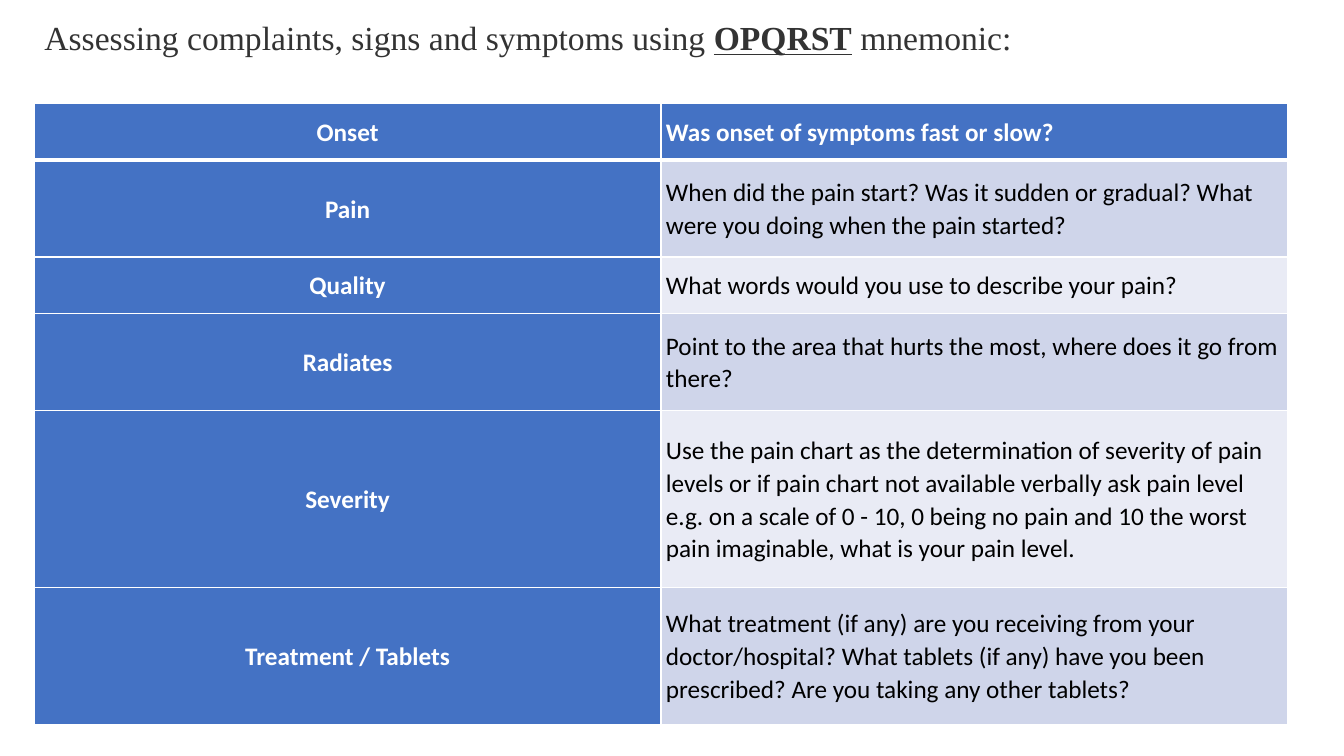
from dataclasses import dataclass
from lxml import etree
from pptx import Presentation, util as u
from pptx.dml.color import RGBColor
from pptx.enum import text
from pptx.oxml import ns

TITLE = [
    ("Assessing complaints, signs and symptoms using ", False),
    ("OPQRST", True),
    (" mnemonic:", False),
]
ROWS = [
    ("Onset", "Was onset of symptoms fast or slow?", 0.56),
    ("Pain", "When did the pain start? Was it sudden or gradual? What were you "
     "doing when the pain started?", 0.96),
    ("Quality", "What words would you use to describe your pain?", 0.56),
    ("Radiates", "Point to the area that hurts the most, where does it go from "
     "there?", 0.96),
    ("Severity", "Use the pain chart as the determination of severity of pain levels "
     "or if pain chart not available verbally ask pain level e.g. on a scale of 0 - 10, "
     "0 being no pain and 10 the worst pain imaginable, what is your pain level.", 1.76),
    ("Treatment / Tablets", "What treatment (if any) are you receiving from your "
     "doctor/hospital? What tablets (if any) have you been prescribed? Are you "
     "taking any other tablets?", 1.36),
]


@dataclass(frozen=True)
class Theme:
    head: str = "4472C4"
    bands: tuple = ("E9EBF5", "CFD5EA")
    light: str = "FFFFFF"
    dark: str = "000000"
    title: str = "333333"
    serif: str = "Times New Roman"
    sans: str = "Calibri"
    big: int = 24
    body: int = 18
    thin: int = 1
    thick: int = 3


T = Theme()
WIDE, HIGH = 13.33, 7.5
LEFT, TOP, WIDTH = 0.34, 1.03, 12.43
PAD = u.Inches(0.05)


def style(font, name, size, color, bold):
    font.name, font.size, font.bold = name, u.Pt(size), bold
    font.color.rgb = RGBColor.from_string(color)


def border(cell, row):
    props = cell._tc.get_or_add_tcPr()
    for side in "LRTB":
        heavy = (side, row) in (("B", 0), ("T", 1))
        width = u.Pt(T.thick if heavy else T.thin)
        line = etree.SubElement(props, ns.qn(f"a:ln{side}"), w=str(int(width)))
        fill = etree.SubElement(line, ns.qn("a:solidFill"))
        etree.SubElement(fill, ns.qn("a:srgbClr"), val=T.light)


def add_title(slide):
    box = slide.shapes.title
    box.left, box.top = u.Inches(LEFT), u.Inches(0.12)
    box.width, box.height = u.Inches(9.88), u.Inches(0.5)
    frame = box.text_frame
    frame.word_wrap = False
    frame.auto_size = text.MSO_AUTO_SIZE.NONE
    frame.vertical_anchor = text.MSO_ANCHOR.TOP
    para = frame.paragraphs[0]
    para.alignment = text.PP_ALIGN.LEFT
    for words, strong in TITLE:
        run = para.add_run()
        run.text = words
        style(run.font, T.serif, T.big, T.title, strong)
        run.font.underline = strong


def fill_cell(cell, words, row, col):
    head = row == 0 or col == 0
    border(cell, row)
    cell.fill.solid()
    shade = T.head if head else T.bands[row % 2]
    cell.fill.fore_color.rgb = RGBColor.from_string(shade)
    cell.margin_left = cell.margin_right = PAD
    cell.margin_top = cell.margin_bottom = PAD
    cell.vertical_anchor = text.MSO_ANCHOR.MIDDLE
    cell.text_frame.text = words
    para = cell.text_frame.paragraphs[0]
    para.alignment = text.PP_ALIGN.LEFT if col else text.PP_ALIGN.CENTER
    para.line_spacing = 1.07
    style(para.runs[0].font, T.sans, T.body, T.light if head else T.dark, head)


def add_table(slide):
    high = sum(row[-1] for row in ROWS)
    area = [u.Inches(n) for n in (LEFT, TOP, WIDTH, high)]
    table = slide.shapes.add_table(len(ROWS), 2, *area).table
    for col in table.columns:
        col.width = u.Inches(WIDTH / 2)
    for r, (*cells, tall) in enumerate(ROWS):
        table.rows[r].height = u.Inches(tall)
        for c, words in enumerate(cells):
            fill_cell(table.cell(r, c), words, r, c)


def main():
    deck = Presentation()
    deck.slide_width, deck.slide_height = u.Inches(WIDE), u.Inches(HIGH)
    slide = deck.slides.add_slide(deck.slide_layouts[5])
    add_title(slide)
    add_table(slide)
    deck.save("out.pptx")


if __name__ == "__main__":
    main()
